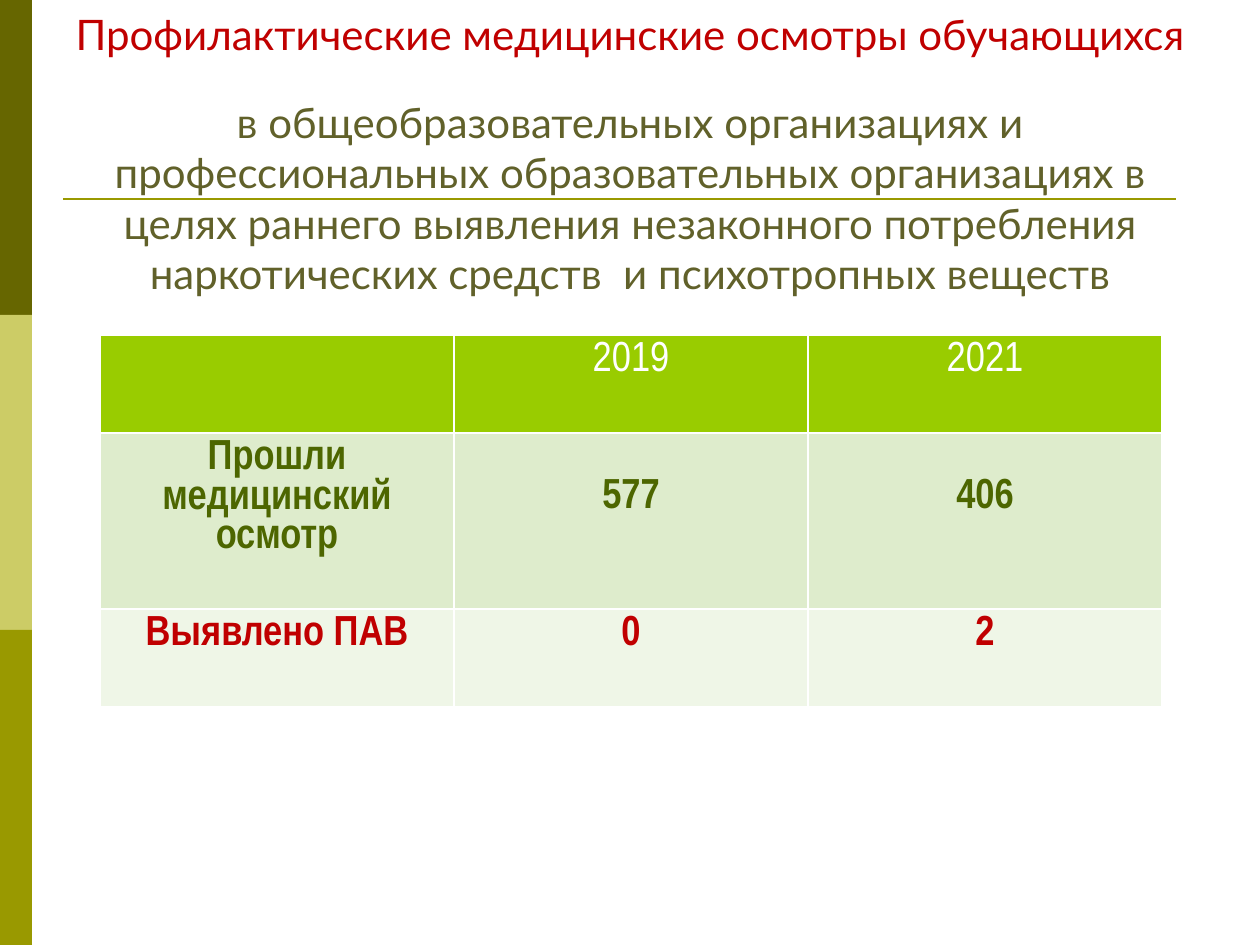
import pptx
import pptx.dml.color
import pptx.enum.shapes
import pptx.enum.text
import pptx.oxml.ns
import pptx.util
from lxml import etree

COLORS = {
    "dark": "666600", "pale": "CCCC66", "olive": "999900",
    "red": "C00000", "title": "61612A", "green": "4D6600",
    "lime": "99CC00", "mint": "DEECCC", "mist": "EFF6E7", "white": "FFFFFF",
}
CENTER = pptx.enum.text.PP_ALIGN.CENTER


def px(length):
    return pptx.util.Emu(round(length * 914400 / 126))


def rgb(name):
    return pptx.dml.color.RGBColor.from_string(COLORS[name])


class SlideStyle:
    """Holds the type style and the current slide, and draws its elements."""

    def __init__(self, page, title_font, table_font, size):
        self.page = page
        self.title_font = title_font
        self.table_font = table_font
        self.size = pptx.util.Pt(size)

    def format_span(self, span, font, color, bold=False):
        span.font.name = font
        span.font.size = self.size
        span.font.bold = bold
        span.font.color.rgb = rgb(color)

    def bar(self, left, top, width, height, color):
        shape = self.page.shapes.add_shape(
            pptx.enum.shapes.MSO_SHAPE.RECTANGLE,
            px(left), px(top), px(width), px(height))
        shape.shadow.inherit = False
        shape.fill.solid()
        shape.fill.fore_color.rgb = rgb(color)
        shape.line.fill.background()

    def rule(self, left, right, top, color, weight):
        line = self.page.shapes.add_connector(
            pptx.enum.shapes.MSO_CONNECTOR.STRAIGHT,
            px(left), px(top), px(right), px(top))
        line.line.color.rgb = rgb(color)
        line.line.width = pptx.util.Pt(weight)
        etree.SubElement(line._element.spPr, pptx.oxml.ns.qn("a:effectLst"))

    def title(self, left, top, width, height, parts):
        box = self.page.shapes.add_textbox(px(left), px(top), px(width), px(height))
        frame = box.text_frame
        frame.word_wrap = True
        frame.vertical_anchor = pptx.enum.text.MSO_ANCHOR.BOTTOM
        para = frame.paragraphs[0]
        para.text = "\v".join(text for text, color in parts)
        para.alignment = CENTER
        for span, (text, color) in zip(para.runs, parts):
            self.format_span(span, self.title_font, color)

    def border(self, cell, color, weight):
        properties = cell._tc.get_or_add_tcPr()
        for index, side in enumerate(("lnL", "lnR", "lnT", "lnB")):
            edge = etree.Element(pptx.oxml.ns.qn("a:" + side),
                                 w=str(pptx.util.Pt(weight)))
            fill = etree.SubElement(edge, pptx.oxml.ns.qn("a:solidFill"))
            etree.SubElement(fill, pptx.oxml.ns.qn("a:srgbClr"), val=COLORS[color])
            properties.insert(index, edge)

    def cell(self, cell, text, fill, color, bold, margin_top):
        cell.fill.solid()
        cell.fill.fore_color.rgb = rgb(fill)
        cell.margin_top = px(margin_top)
        cell.text_frame.text = text
        para = cell.text_frame.paragraphs[0]
        para.alignment = CENTER
        for span in para.runs:
            self.format_span(span, self.table_font, color, bold)
        self.border(cell, "white", 1)

    def table(self, left, top, column_width, rows):
        columns = len(rows[0]["texts"])
        height = sum(row["height"] for row in rows)
        table = self.page.shapes.add_table(
            len(rows), columns, px(left), px(top),
            px(column_width * columns), px(height)).table
        for column in table.columns:
            column.width = px(column_width)
        for row_index, row in enumerate(rows):
            table.rows[row_index].height = px(row["height"])
            for column_index, text in enumerate(row["texts"]):
                margin = row["value_margin"] if column_index else 6
                self.cell(table.cell(row_index, column_index), text,
                          row["fill"], row["color"], row["bold"], margin)


def main():
    deck = pptx.Presentation()
    deck.slide_width, deck.slide_height = px(1260), px(945)
    page = deck.slides.add_slide(deck.slide_layouts[6])
    style = SlideStyle(page, "Lato", "Arial Narrow", 24)

    for index, color in enumerate(("dark", "pale", "olive")):
        style.bar(0, index * 315, 32, 315, color)
    style.rule(63, 1176, 199, "olive", 1.5)
    style.title(63, 92, 1134, 212, [
        ("Профилактические медицинские осмотры обучающихся ", "red"),
        ("в общеобразовательных организациях и профессиональных "
         "образовательных организациях в целях раннего выявления незаконного "
         "потребления наркотических средств  и психотропных веществ", "title"),
    ])
    style.table(100, 335, 354, [
        {"texts": ("", "2019", "2021"), "height": 98, "fill": "lime",
         "color": "white", "bold": False, "value_margin": 6},
        {"texts": ("Прошли медицинский осмотр", "577", "406"), "height": 176,
         "fill": "mint", "color": "green", "bold": True, "value_margin": 45},
        {"texts": ("Выявлено ПАВ", "0", "2"), "height": 98, "fill": "mist",
         "color": "red", "bold": True, "value_margin": 6},
    ])
    deck.save("out.pptx")


if __name__ == "__main__":
    main()
